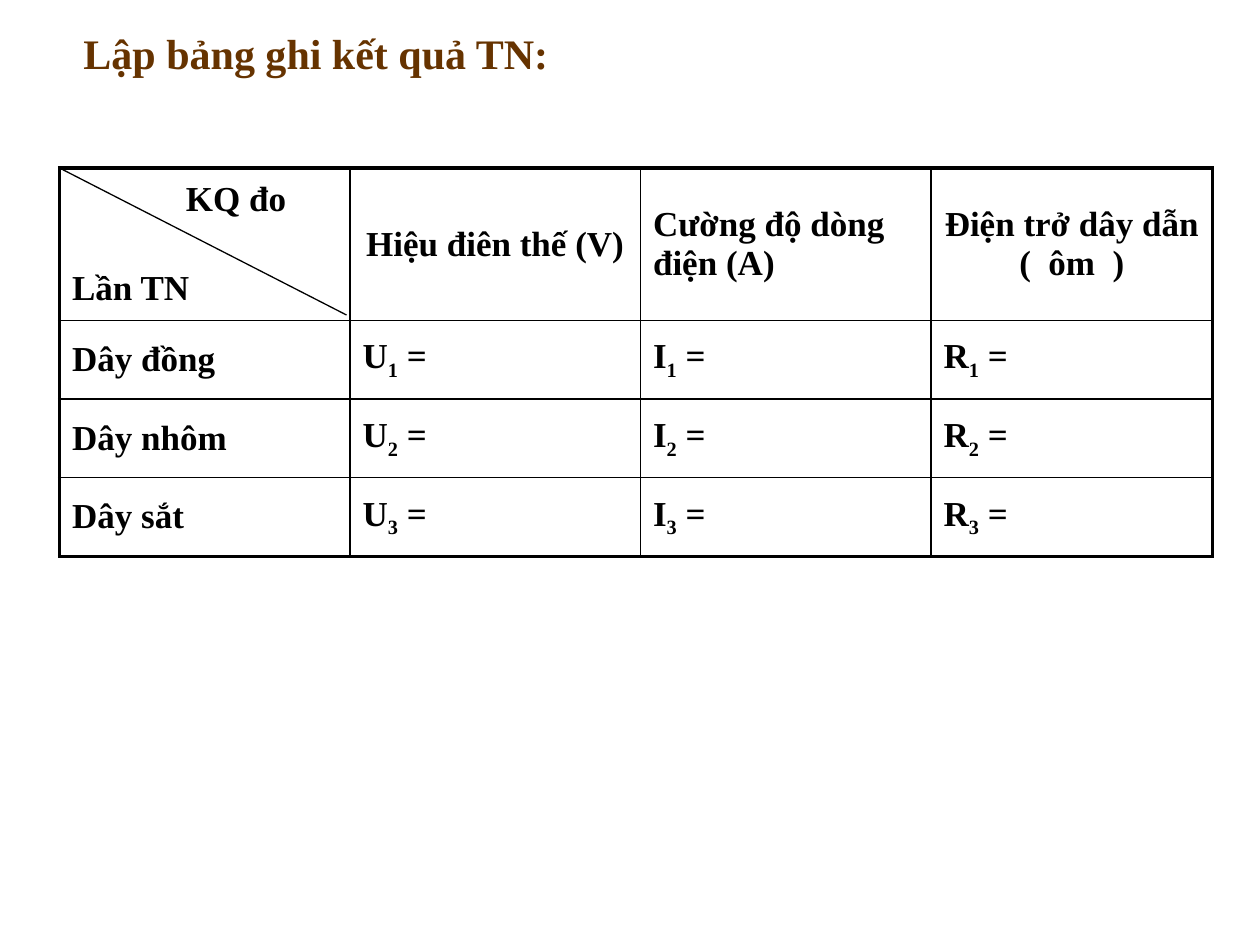
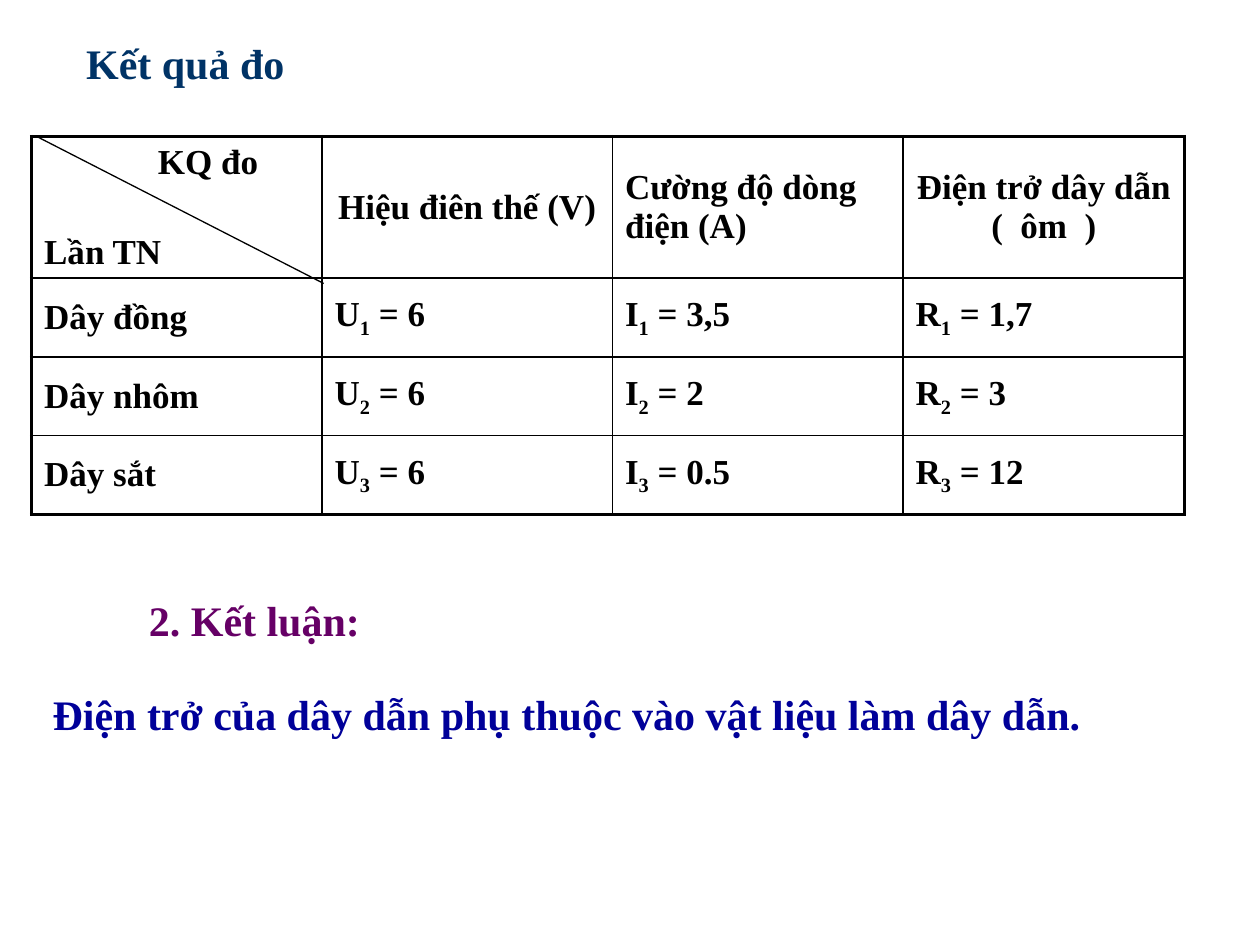
from dataclasses import dataclass
from lxml.etree import SubElement
from pptx import Presentation
from pptx.dml.color import RGBColor as RGB
from pptx.enum.shapes import MSO_CONNECTOR as CONN
from pptx.enum.text import MSO_ANCHOR as ANCHOR, MSO_AUTO_SIZE as AUTO, PP_ALIGN as ALIGN
from pptx.oxml.ns import qn
from pptx.util import Pt


@dataclass(frozen=True)
class Theme:
    font: str = "Times New Roman"
    ink: str = "000000"
    brown: str = "663300"
    teal: str = "003366"
    purple: str = "660066"
    blue: str = "000099"
    heading: int = 24
    cell: int = 20
    outer: float = 2.25
    inner: float = 1
    diagonal: float = 0.75


T = Theme()
TITLE_ONLY = 5
HEADINGS = ["Hiệu điên thế (V)", "Cường độ dòng điện (A)", "Điện trở dây dẫn (  ôm  )"]
WIRES = ["Dây đồng", "Dây nhôm", "Dây sắt"]
QUANTITIES = ["U", "I", "R"]
READINGS = [["6", "3,5", "1,7"], ["6", "2", "3"], ["6", "0.5", "12"]]
COL_WIDTHS = [166, 166, 166, 161]
ROW_HEIGHT = 45


def add_run(p, text, size, color, baseline=None):
    r = p.add_run()
    r.text = text
    r.font.name, r.font.size, r.font.bold = T.font, Pt(size), True
    r.font.color.rgb = RGB.from_string(color)
    if baseline:
        r.font._element.set("baseline", str(baseline))


def fill_heading(sp, box, text, color, wrap=False):
    """Place a one-line heading in a placeholder or text box."""
    sp.left, sp.top, sp.width, sp.height = map(Pt, box)
    tf = sp.text_frame
    tf.word_wrap, tf.auto_size = wrap, AUTO.NONE
    tf.vertical_anchor = ANCHOR.TOP
    p = tf.paragraphs[0]
    p.alignment = ALIGN.LEFT
    add_run(p, text, T.heading, color)


def add_text(s, box, text, color, wrap=False):
    fill_heading(s.shapes.add_textbox(*map(Pt, box)), box, text, color, wrap)


def style_cell(cell, row, col, last_row, last_col):
    """Thick lines on the outside of the table, thin ones inside, no fill."""
    cell.vertical_anchor = ANCHOR.MIDDLE
    cell.margin_top = cell.margin_bottom = Pt(3)
    tc_pr = cell._tc.get_or_add_tcPr()
    edges = {"L": col == 0, "R": col == last_col, "T": row == 0, "B": row == last_row}
    for side, is_outer in edges.items():
        width = T.outer if is_outer else T.inner
        ln = SubElement(tc_pr, qn(f"a:ln{side}"), w=str(Pt(width)))
        SubElement(SubElement(ln, qn("a:solidFill")), qn("a:srgbClr"), val=T.ink)
    cell.fill.background()


def fill_corner(cell):
    """Column label at the upper right, row label at the lower left."""
    tf = cell.text_frame
    p = tf.paragraphs[0]
    p._p.get_or_add_pPr().set("marL", str(Pt(65)))
    add_run(p, "KQ đo", T.cell, T.ink)
    p = tf.add_paragraph()
    p.space_before = Pt(29)
    add_run(p, "Lần TN", T.cell, T.ink)


def add_results_table(s, left, top, header_height, readings=None, diagonal_dx=0):
    last_row, last_col = len(WIRES), len(QUANTITIES)
    height = header_height + ROW_HEIGHT * last_row
    table = s.shapes.add_table(last_row + 1, last_col + 1, Pt(left), Pt(top),
                               Pt(sum(COL_WIDTHS)), Pt(height)).table
    table.first_row = table.horz_banding = False
    for column, width in zip(table.columns, COL_WIDTHS):
        column.width = Pt(width)
    for i, row in enumerate(table.rows):
        row.height = Pt(ROW_HEIGHT if i else header_height)
        for j, cell in enumerate(row.cells):
            style_cell(cell, i, j, last_row, last_col)

    # Header row and wire names
    fill_corner(table.cell(0, 0))
    for j, heading in enumerate(HEADINGS, 1):
        p = table.cell(0, j).text_frame.paragraphs[0]
        p.alignment = ALIGN.LEFT if j == 2 else ALIGN.CENTER
        add_run(p, heading, T.cell, T.ink)
    for i, wire in enumerate(WIRES, 1):
        add_run(table.cell(i, 0).text_frame.paragraphs[0], wire, T.cell, T.ink)

        # Quantities with the trial number as subscript
        for j, symbol in enumerate(QUANTITIES, 1):
            p = table.cell(i, j).text_frame.paragraphs[0]
            value = f" = {readings[i - 1][j - 1]}" if readings else " ="
            add_run(p, symbol, T.cell, T.ink)
            add_run(p, str(i), T.cell, T.ink, baseline=-25000)
            add_run(p, value, T.cell, T.ink)

    # Diagonal across the corner cell
    x = left + diagonal_dx
    line = s.shapes.add_connector(CONN.STRAIGHT, Pt(x), Pt(top), Pt(x + 164), Pt(top + 84))
    line.line.color.rgb = RGB.from_string(T.ink)
    line.line.width = Pt(T.diagonal)
    SubElement(line._element.spPr, qn("a:effectLst"))


def new_slide(prs, title, box, color):
    s = prs.slides.add_slide(prs.slide_layouts[TITLE_ONLY])
    fill_heading(s.shapes.title, box, title, color)
    return s


def build_blank_record(prs):
    s = new_slide(prs, "Lập bảng ghi kết quả TN:", (40.5, 12, 283, 36), T.brown)
    add_results_table(s, 34, 96, header_height=87)


def build_results(prs):
    s = new_slide(prs, "Kết quả đo", (42, 18, 129, 36), T.teal)
    add_results_table(s, 18, 78, header_height=81, readings=READINGS, diagonal_dx=3)
    # Conclusion
    add_text(s, (78, 336, 143, 36), "2. Kết luận:", T.purple)
    add_text(s, (23, 390, 673, 36),
             "Điện trở của dây dẫn phụ thuộc vào vật liệu làm dây dẫn.", T.blue, wrap=True)


def main():
    prs = Presentation()
    prs.slide_width, prs.slide_height = Pt(720), Pt(540)
    build_blank_record(prs)
    build_results(prs)
    prs.save("out.pptx")


if __name__ == "__main__":
    main()
